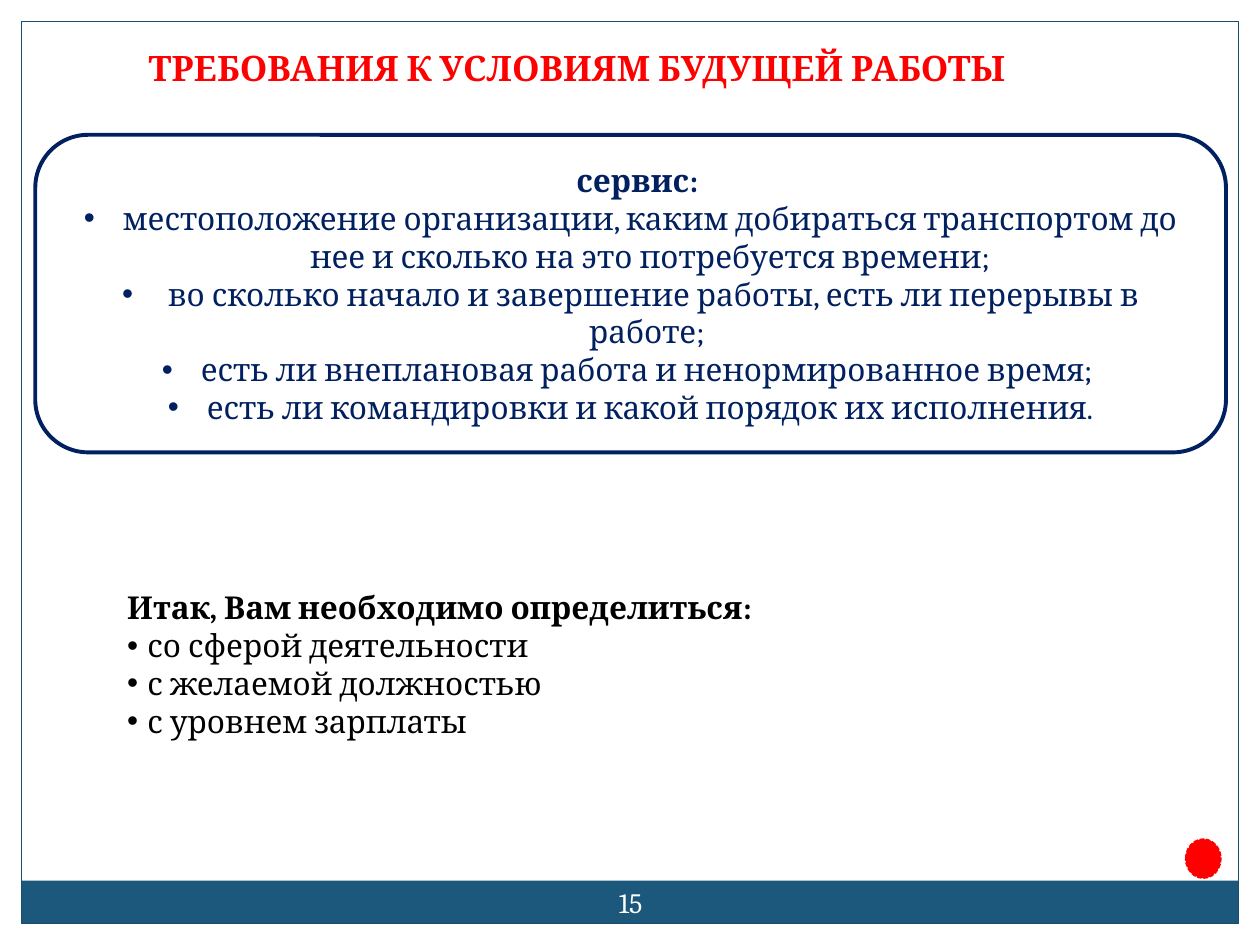
from dataclasses import dataclass

from lxml import etree
from pptx import Presentation
from pptx.dml.color import RGBColor
from pptx.enum import dml, shapes, text
from pptx.oxml import ns
from pptx.util import Inches, Pt


@dataclass(frozen=True)
class Theme:
    font: str = "Cambria"
    red: str = "FF0000"
    navy: str = "002060"
    band: str = "1B587C"
    frame: str = "184E6D"
    white: str = "FFFFFF"
    black: str = "000000"
    title_size: int = 20
    text_size: int = 18
    number_size: int = 16


THEME = Theme()
CENTER = text.PP_ALIGN.CENTER
LEFT = text.PP_ALIGN.LEFT
MIDDLE = text.MSO_ANCHOR.MIDDLE
TOP = text.MSO_ANCHOR.TOP

TITLE = "ТРЕБОВАНИЯ К УСЛОВИЯМ БУДУЩЕЙ РАБОТЫ"
SERVICE = "сервис: "
SERVICE_ITEMS = [
    "местоположение организации, каким добираться транспортом до нее "
    "и сколько на это потребуется времени;",
    " во сколько начало и завершение работы, есть ли перерывы в работе; ",
    "есть ли внеплановая работа и ненормированное время; ",
    "есть ли командировки и какой порядок их исполнения.",
]
SUMMARY = "Итак, Вам необходимо определиться:"
SUMMARY_ITEMS = [
    "со сферой деятельности",
    "с желаемой должностью",
    "с уровнем зарплаты",
]


def apply(target, **values):
    for name, value in values.items():
        setattr(target, name, value)


def place(shape, box):
    apply(shape, **dict(zip(("left", "top", "width", "height"), map(Inches, box))))


def set_indent(paragraph, margin, bullet=None):
    """Set the left margin; a bullet hangs back to the text edge."""
    props = paragraph._p.get_or_add_pPr()
    props.set("marL", str(Inches(margin)))
    props.set("indent", str(Inches(-margin) if bullet else 0))
    if bullet:
        etree.SubElement(props, ns.qn("a:buFont"), typeface="Arial")
        etree.SubElement(props, ns.qn("a:buChar"), char=bullet)
    else:
        etree.SubElement(props, ns.qn("a:buNone"))


def write(paragraph, words, size, color, bold=False, align=LEFT):
    apply(paragraph, alignment=align, space_before=Pt(0), space_after=Pt(0))
    run = paragraph.add_run()
    run.text = words
    apply(run.font, name=THEME.font, size=Pt(size), bold=bold)
    run.font.color.rgb = RGBColor.from_string(color)


def write_list(frame, heading, items, color, align, heading_margin, item_margin):
    heading_line = frame.paragraphs[0]
    write(heading_line, heading, THEME.text_size, color, True, align)
    set_indent(heading_line, heading_margin)
    for item in items:
        line = frame.add_paragraph()
        write(line, item, THEME.text_size, color, align=align)
        set_indent(line, item_margin, "•")


def add_outline(slide, kind, box, fill=None, line=None, width=0.75):
    shape = slide.shapes.add_shape(kind, *map(Inches, box))
    shape.shadow.inherit = False
    if fill:
        shape.fill.solid()
        shape.fill.fore_color.rgb = RGBColor.from_string(fill)
    else:
        shape.fill.background()
    if line:
        shape.line.color.rgb = RGBColor.from_string(line)
        shape.line.width = Pt(width)
    else:
        shape.line.fill.background()
    return shape


def add_page_frame(slide, box):
    left, top, width, height = box
    band_height = 0.34
    band = (left, top + height - band_height, width, band_height)
    rectangle = shapes.MSO_SHAPE.RECTANGLE
    add_outline(slide, rectangle, band, fill=THEME.band)
    add_outline(slide, rectangle, box, line=THEME.frame)


def fill_title(slide, box):
    title = slide.shapes.title
    place(title, box)
    apply(title.text_frame, word_wrap=False, vertical_anchor=TOP,
          auto_size=text.MSO_AUTO_SIZE.NONE)
    write(title.text_frame.paragraphs[0], TITLE, THEME.title_size, THEME.red, True)


def add_service_card(slide, box):
    card = add_outline(slide, shapes.MSO_SHAPE.ROUNDED_RECTANGLE, box,
                       THEME.white, THEME.navy, 2.25)
    apply(card.text_frame, word_wrap=True, vertical_anchor=MIDDLE)
    write_list(card.text_frame, SERVICE, SERVICE_ITEMS, THEME.navy, CENTER, 0.16, 0.31)


def fill_summary(slide, box):
    summary = slide.placeholders[1]
    place(summary, box)
    apply(summary.text_frame, word_wrap=True, vertical_anchor=TOP,
          auto_size=text.MSO_AUTO_SIZE.NONE)
    write_list(summary.text_frame, SUMMARY, SUMMARY_ITEMS, THEME.black, LEFT, 0, 0.16)


def add_marker(slide, box):
    marker = add_outline(slide, shapes.MSO_SHAPE.OVAL, box, THEME.red, THEME.red, 0.9)
    marker.line.dash_style = dml.MSO_LINE.SQUARE_DOT


def add_page_number(slide, box, number):
    frame = slide.shapes.add_textbox(*map(Inches, box)).text_frame
    sides = ("left", "top", "right", "bottom")
    apply(frame, word_wrap=True, vertical_anchor=MIDDLE,
          **{f"margin_{side}": Inches(0.05) for side in sides})
    write(frame.paragraphs[0], number, THEME.number_size, THEME.white, align=CENTER)


def main():
    deck = Presentation()
    apply(deck, slide_width=Inches(10), slide_height=Inches(7.5))
    slide = deck.slides.add_slide(deck.slide_layouts[1])
    add_page_frame(slide, (0.17, 0.17, 9.66, 7.16))
    add_service_card(slide, (0.28, 1.07, 9.45, 2.52))
    fill_title(slide, (1.08, 0.32, 7.83, 0.44))
    fill_summary(slide, (0.91, 4.62, 8.43, 1.31))
    add_marker(slide, (9.41, 6.66, 0.28, 0.31))
    add_page_number(slide, (4.67, 6.92, 0.67, 0.48), "15")
    deck.save("out.pptx")


if __name__ == "__main__":
    main()
